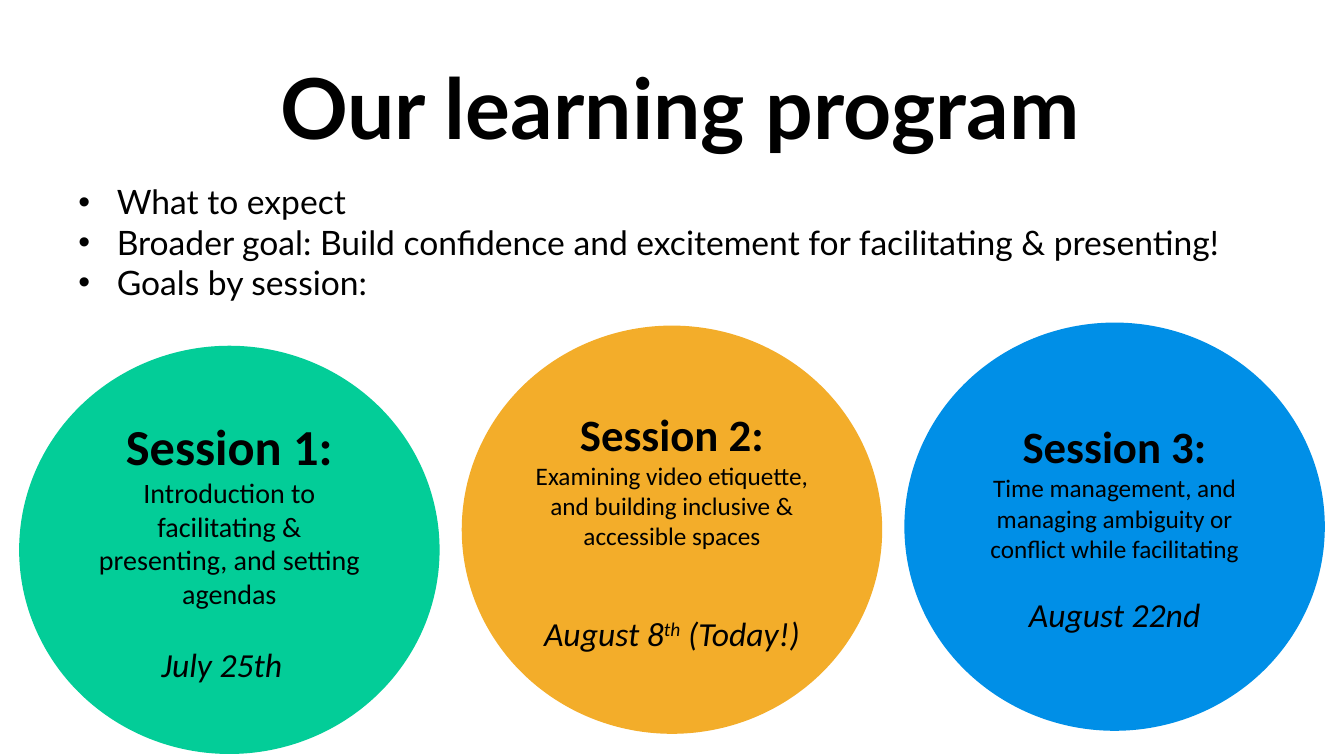
import pptx
import pptx.dml.color
import pptx.enum.shapes
import pptx.enum.text
import pptx.oxml.ns
import pptx.util
from lxml import etree

PX = 9144  # one hundredth of an inch
BLACK = pptx.dml.color.RGBColor(0x00, 0x00, 0x00)
GREEN = pptx.dml.color.RGBColor(0x03, 0xCD, 0x98)
AMBER = pptx.dml.color.RGBColor(0xF3, 0xAD, 0x2A)
BLUE = pptx.dml.color.RGBColor(0x00, 0x8F, 0xE7)
ALIGN = pptx.enum.text.PP_ALIGN
ANCHOR = pptx.enum.text.MSO_ANCHOR

GOALS = [
    "What to expect",
    "Broader goal: Build confidence and excitement for facilitating & presenting!",
    "Goals by session:",
]

# top, colour, heading, heading size, goal, goal size,
# gap above the date in points, date runs (text, superscript), date right indent
SESSIONS = [
    (343, GREEN, "Session 1:", 36,
     "Introduction to facilitating & presenting, and setting agendas", 20,
     24.4, [("July 25th", False)], 15),
    (323, AMBER, "Session 2:", 32,
     "Examining video etiquette, and building inclusive & accessible spaces", 18,
     44, [("August 8", False), ("th", True), (" (Today!)", False)], 0),
    (320, BLUE, "Session 3:", 32,
     "Time management, and managing ambiguity or conflict while facilitating", 18,
     22, [("August 22nd", False)], 0),
]
CIRCLE_LEFT, CIRCLE_STEP = 19, 439
CIRCLE_WIDTH, CIRCLE_HEIGHT = 417, 405


def to_emu(*lengths):
    return [pptx.util.Emu(length * PX) for length in lengths]


def add_run(paragraph, text, font_name, size, bold=False, italic=False):
    run = paragraph.add_run()
    run.text = text
    run.font.name = font_name
    run.font.size = pptx.util.Pt(size)
    run.font.bold = bold
    run.font.italic = italic
    run.font.color.rgb = BLACK
    return run


def next_paragraph(text_frame, first):
    return text_frame.paragraphs[0] if first else text_frame.add_paragraph()


def place_title(slide, box):
    title = slide.shapes.title
    title.left, title.top, title.width, title.height = to_emu(*box)
    text_frame = title.text_frame
    text_frame.auto_size = pptx.enum.text.MSO_AUTO_SIZE.NONE
    text_frame.vertical_anchor = ANCHOR.TOP
    paragraph = text_frame.paragraphs[0]
    paragraph.alignment = ALIGN.LEFT
    add_run(paragraph, "Our learning program", "Lato", 60, bold=True)


def add_goals(slide, box):
    text_frame = slide.shapes.add_textbox(*to_emu(*box)).text_frame
    text_frame.word_wrap = True
    for index, goal in enumerate(GOALS):
        paragraph = next_paragraph(text_frame, index == 0)
        properties = paragraph._p.get_or_add_pPr()
        properties.set("marL", str(38 * PX))
        properties.set("indent", str(-38 * PX))
        font = etree.SubElement(properties, pptx.oxml.ns.qn("a:buFont"))
        font.set("typeface", "Arial")
        bullet = etree.SubElement(properties, pptx.oxml.ns.qn("a:buChar"))
        bullet.set("char", "•")
        add_run(paragraph, goal, "Lato", 24)


def add_session(slide, box, session):
    _, color, heading, heading_size, goal, goal_size, gap, date, indent = session
    circle = slide.shapes.add_shape(
        pptx.enum.shapes.MSO_SHAPE.OVAL, *to_emu(*box))
    circle.shadow.inherit = False
    circle.fill.solid()
    circle.fill.fore_color.rgb = color
    circle.line.fill.background()
    text_frame = circle.text_frame
    text_frame.word_wrap = True
    text_frame.vertical_anchor = ANCHOR.MIDDLE
    paragraphs = [next_paragraph(text_frame, index == 0) for index in range(3)]
    for paragraph in paragraphs:
        paragraph.alignment = ALIGN.CENTER
    heading_line, goal_line, date_line = paragraphs
    add_run(heading_line, heading, "Calibri", heading_size, bold=True)
    add_run(goal_line, goal, "Calibri", goal_size)
    date_line.space_before = pptx.util.Pt(gap)
    date_line._p.get_or_add_pPr().set("marR", str(indent * PX))
    for text, superscript in date:
        run = add_run(date_line, text, "Calibri", 24, italic=True)
        if superscript:
            run._r.get_or_add_rPr().set("baseline", "30000")


def main():
    presentation = pptx.Presentation()
    presentation.slide_width, presentation.slide_height = to_emu(1333, 750)
    slide = presentation.slides.add_slide(presentation.slide_layouts[5])
    place_title(slide, (268, 50, 968, 111))
    add_goals(slide, (68, 175, 1228, 131))
    for index, session in enumerate(SESSIONS):
        left = CIRCLE_LEFT + index * CIRCLE_STEP
        add_session(slide, (left, session[0], CIRCLE_WIDTH, CIRCLE_HEIGHT), session)
    presentation.save("out.pptx")


if __name__ == "__main__":
    main()
